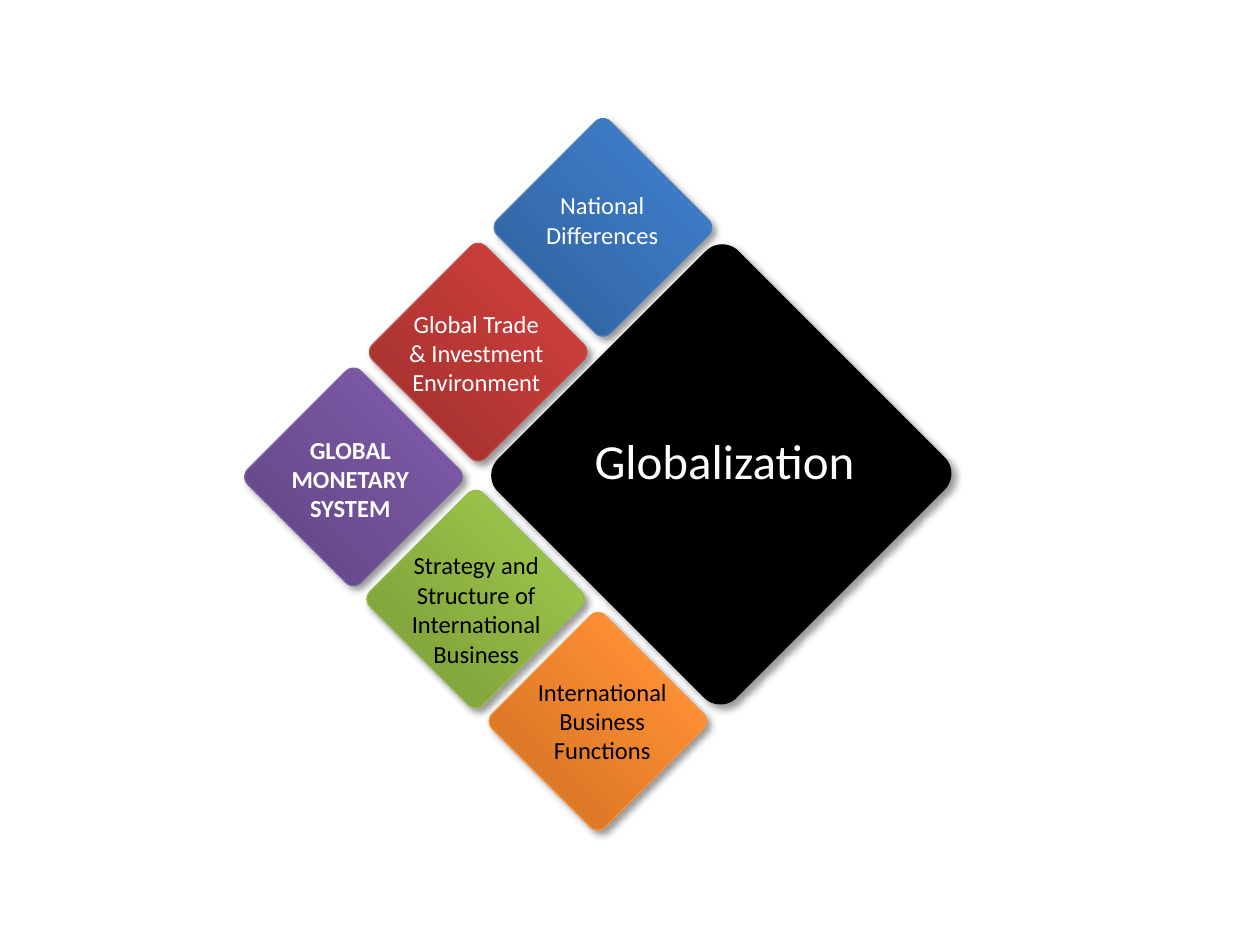
import pptx
import pptx.util
import pptx.dml.color
import pptx.enum.shapes
import pptx.enum.text
import pptx.oxml
import pptx.oxml.ns

SLIDE_WIDTH, SLIDE_HEIGHT = 10, 7.5
COLORS = {
    "white": "FFFFFF", "black": "000000",
    "blue": "4B7EBC", "red": "BF4C48", "purple": "7D60A0",
    "green": "98B955", "orange": "F69240",
}
GRADIENTS = {
    "blue": ("2F5F99", "3D7CC7", "3A7CCB"),
    "red": ("9C2F2D", "CB3E3A", "CE3B37"),
    "purple": ("5F4480", "7B58A6", "7C57A8"),
    "green": ("779737", "9BC348", "9DC746"),
    "orange": ("CC6E20", "FF9034", "FF9136"),
}
GRADIENT_STOPS = (0, 80, 100)
TOPICS = [
    (["National Differences"], "blue", "white", False, 1.46, 0.57),
    (["Global Trade", "& Investment Environment"], "red", "white", False, 2.4, 0.81),
    (["GLOBAL", "MONETARY", "SYSTEM"], "purple", "white", True, 3.4, 0.81),
    (["Strategy and", "Structure of", "International", "Business"],
     "green", "black", False, 4.32, 1.04),
    (["International", "Business", "Functions"], "orange", "black", False, 5.32, 0.81),
]
CORNER = len(TOPICS) // 2
CORNER_LEFT, CORNER_TOP = 2.17, 3.15
TILE_SIZE = 1.27
STEP_UP, STEP_DOWN = 0.99, 0.97
LABEL_LEFT, LABEL_STEP, LABEL_WIDTH = 1.99, 1, 1.58


def rgb(name):
    return pptx.dml.color.RGBColor.from_string(COLORS[name])


def inches(box):
    return [pptx.util.Inches(length) for length in box]


def add_gradient(properties, stop_colors):
    stops = "".join(
        f'<a:gs pos="{stop * 1000}"><a:srgbClr val="{color}"/></a:gs>'
        for stop, color in zip(GRADIENT_STOPS, stop_colors)
    )
    gradient = pptx.oxml.parse_xml(
        f'<a:gradFill {pptx.oxml.ns.nsdecls("a")} rotWithShape="1">'
        f'<a:gsLst>{stops}</a:gsLst><a:lin ang="16200000" scaled="0"/></a:gradFill>'
    )
    properties.find(pptx.oxml.ns.qn("a:prstGeom")).addnext(gradient)


def add_shadow(properties):
    properties.append(pptx.oxml.parse_xml(
        f'<a:effectLst {pptx.oxml.ns.nsdecls("a")}>'
        '<a:outerShdw blurRad="50800" dist="38100" dir="2700000" algn="tl" rotWithShape="0">'
        '<a:srgbClr val="000000"><a:alpha val="40000"/></a:srgbClr>'
        '</a:outerShdw></a:effectLst>'
    ))


def add_diamond(group, box, color):
    diamond = group.shapes.add_shape(
        pptx.enum.shapes.MSO_SHAPE.ROUNDED_RECTANGLE, *inches(box))
    diamond.rotation = 45
    diamond.adjustments[0] = 0.067
    properties = diamond.element.spPr
    if color in GRADIENTS:
        add_gradient(properties, GRADIENTS[color])
    else:
        diamond.fill.solid()
        diamond.fill.fore_color.rgb = rgb(color)
    diamond.line.color.rgb = rgb(color)
    diamond.line.width = pptx.util.Pt(0.75)
    add_shadow(properties)


def add_label(group, box, lines, color, size, bold=False):
    label = group.shapes.add_textbox(*inches(box))
    frame = label.text_frame
    frame.word_wrap = True
    frame.auto_size = pptx.enum.text.MSO_AUTO_SIZE.SHAPE_TO_FIT_TEXT
    frame.text = "\n".join(lines)
    for paragraph in frame.paragraphs:
        paragraph.alignment = pptx.enum.text.PP_ALIGN.CENTER
        paragraph.font.name = "Calibri"
        paragraph.font.size = pptx.util.Pt(size)
        paragraph.font.bold = bold
        paragraph.font.color.rgb = rgb(color)


def main():
    deck = pptx.Presentation()
    deck.slide_width, deck.slide_height = inches((SLIDE_WIDTH, SLIDE_HEIGHT))
    slide = deck.slides.add_slide(deck.slide_layouts.get_by_name("Blank"))

    for row, (lines, color, text_color, bold, label_top, label_height) in enumerate(TOPICS):
        offset = row - CORNER
        step = STEP_UP if offset < 0 else STEP_DOWN
        left = CORNER_LEFT + abs(offset) * step
        top = CORNER_TOP + offset * step
        label_left = LABEL_LEFT + abs(offset) * LABEL_STEP
        group = slide.shapes.add_group_shape()
        add_diamond(group, (left, top, TILE_SIZE, TILE_SIZE), color)
        add_label(group, (label_left, label_top, LABEL_WIDTH, label_height),
                  lines, text_color, 14, bold)

    center = slide.shapes.add_group_shape()
    add_diamond(center, (4.39, 2.42, 2.67, 2.69), "black")
    add_label(center, (4.5, 3.37, 2.5, 0.57), ["Globalization"], "white", 28)

    deck.save("out.pptx")


if __name__ == "__main__":
    main()
